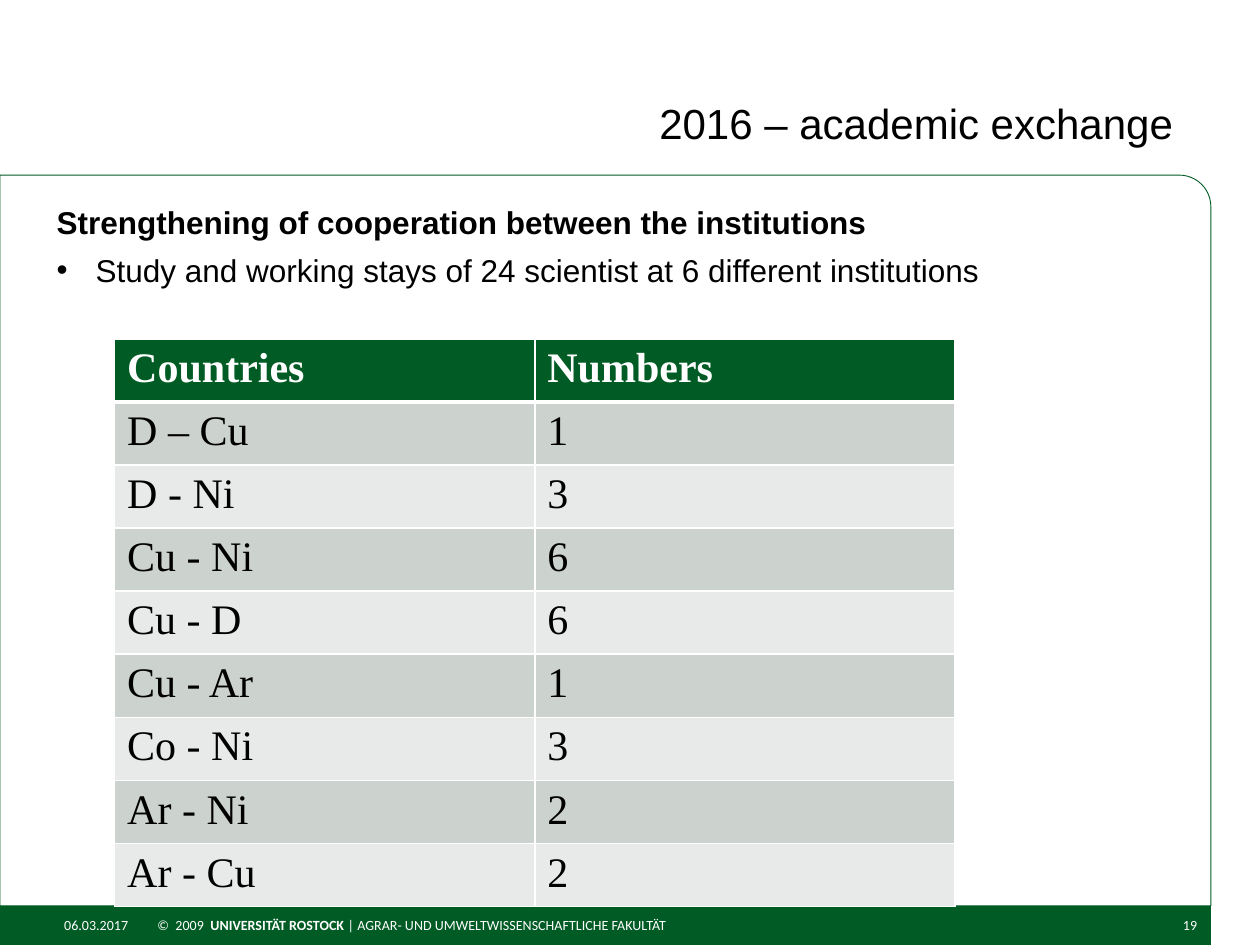
from lxml.etree import SubElement
from pptx import Presentation
from pptx.dml.color import RGBColor
from pptx.enum.shapes import MSO_SHAPE as Shape
from pptx.enum.text import MSO_ANCHOR as Anchor, MSO_AUTO_SIZE as AutoSize, PP_ALIGN as Align
from pptx.oxml.ns import qn
from pptx.util import Inches, Pt

COLORS = {
    "green": "005C24",
    "white": "FFFFFF",
    "black": "000000",
    "dark_band": "CCD2CD",
    "light_band": "E7EAE8",
}


def write(paragraph, text, size=18, font="Arial", color="black", bold=False,
          align=Align.LEFT, after=0):
    paragraph.alignment = align
    paragraph.space_before = Pt(0)
    paragraph.space_after = Pt(after)
    run = paragraph.add_run()
    run.text = text
    run.font.size = Pt(size)
    run.font.name = font
    run.font.bold = bold
    run.font.color.rgb = RGBColor.from_string(COLORS[color])


def add_border(cell, side, width):
    """Draw a white line on one side (L, R, T or B); call before filling the cell."""
    line = SubElement(cell._tc.get_or_add_tcPr(), qn(f"a:ln{side}"), w=str(Pt(width)))
    fill = SubElement(line, qn("a:solidFill"))
    SubElement(fill, qn("a:srgbClr"), val=COLORS["white"])


presentation = Presentation()
presentation.slide_width = Inches(10)
presentation.slide_height = Inches(7.5)
slide = presentation.slides.add_slide(presentation.slide_layouts[1])
title, body = slide.placeholders

# Footer bar and content frame
green = RGBColor.from_string(COLORS["green"])
bar = slide.shapes.add_shape(Shape.RECTANGLE, 0, Inches(7.19), Inches(9.61), Inches(0.31))
bar.fill.solid()
bar.fill.fore_color.rgb = green
frame = slide.shapes.add_shape(Shape.ROUND_1_RECTANGLE, 0, Inches(1.39), Inches(9.61), Inches(5.8))
frame.adjustments[0] = 0.25 / 5.8
frame.fill.background()
for shape in (bar, frame):
    shape.shadow.inherit = False
    shape.line.color.rgb = green
    shape.line.width = Pt(0.5)

# Footer texts
footers = [
    (0.51, 0.73, 0, 0, Align.LEFT, [("06.03.2017", False)]),
    (9.11, 0.49, 0.1, 0.1, Align.RIGHT, [("19", False)]),
    (1.25, 7.87, 0, 0.1, Align.LEFT, [
        ("©  2009  ", False),
        ("UNIVERSITÄT ROSTOCK ", True),
        ("| AGRAR- UND UMWELTWISSENSCHAFTLICHE FAKULTÄT", False),
    ]),
]
for left, width, inset_left, inset_right, align, runs in footers:
    box = slide.shapes.add_textbox(Inches(left), Inches(7.18), Inches(width), Inches(0.32))
    text_frame = box.text_frame
    text_frame.word_wrap = True
    text_frame.vertical_anchor = Anchor.MIDDLE
    text_frame.margin_left = Inches(inset_left)
    text_frame.margin_right = Inches(inset_right)
    for text, bold in runs:
        write(text_frame.paragraphs[0], text, size=8, font="Calibri", color="white",
              bold=bold, align=align)

# Title and body
for placeholder, left, top, width, height in (
    (title, 4.33, 0.72, 5.08, 0.5),
    (body, 0.35, 1.56, 8.9, 1.18),
):
    placeholder.left, placeholder.top = Inches(left), Inches(top)
    placeholder.width, placeholder.height = Inches(width), Inches(height)
    placeholder.text_frame.auto_size = AutoSize.NONE
    placeholder.text_frame.vertical_anchor = Anchor.TOP

write(title.text_frame.paragraphs[0], "2016 – academic exchange", size=24, align=Align.RIGHT)

heading = body.text_frame.paragraphs[0]
bullet = body.text_frame.add_paragraph()
for paragraph, indent, tag, attributes in (
    (heading, 0, "a:buNone", {}),
    (bullet, 0.31, "a:buChar", {"char": "•"}),
):
    properties = paragraph._p.get_or_add_pPr()
    properties.set("marL", str(Inches(indent)))
    properties.set("indent", str(-Inches(indent)))
    SubElement(properties, qn(tag), attributes)
write(heading, "Strengthening of cooperation between the institutions", bold=True, after=6)
write(bullet, "Study and working stays of 24 scientist at 6 different institutions", after=6)

# Exchange table
rows = [
    ("Countries", "Numbers"),
    ("D – Cu", "1"),
    ("D - Ni", "3"),
    ("Cu - Ni", "6"),
    ("Cu - D", "6"),
    ("Cu - Ar", "1"),
    ("Co - Ni", "3"),
    ("Ar - Ni", "2"),
    ("Ar - Cu", "2"),
]
table = slide.shapes.add_table(len(rows), 2, Inches(0.91), Inches(2.69),
                               Inches(6.67), Inches(0.5 * len(rows))).table
for row_index, row in enumerate(rows):
    is_header = row_index == 0
    band = "green" if is_header else "dark_band" if row_index % 2 else "light_band"
    for column_index, text in enumerate(row):
        cell = table.cell(row_index, column_index)
        for side in "LRTB":
            thick = (row_index, side) in ((0, "B"), (1, "T"))
            add_border(cell, side, 3 if thick else 1)
        cell.fill.solid()
        cell.fill.fore_color.rgb = RGBColor.from_string(COLORS[band])
        write(cell.text_frame.paragraphs[0], text, size=24, font="Times New Roman",
              color="white" if is_header else "black", bold=is_header)

presentation.save("out.pptx")
